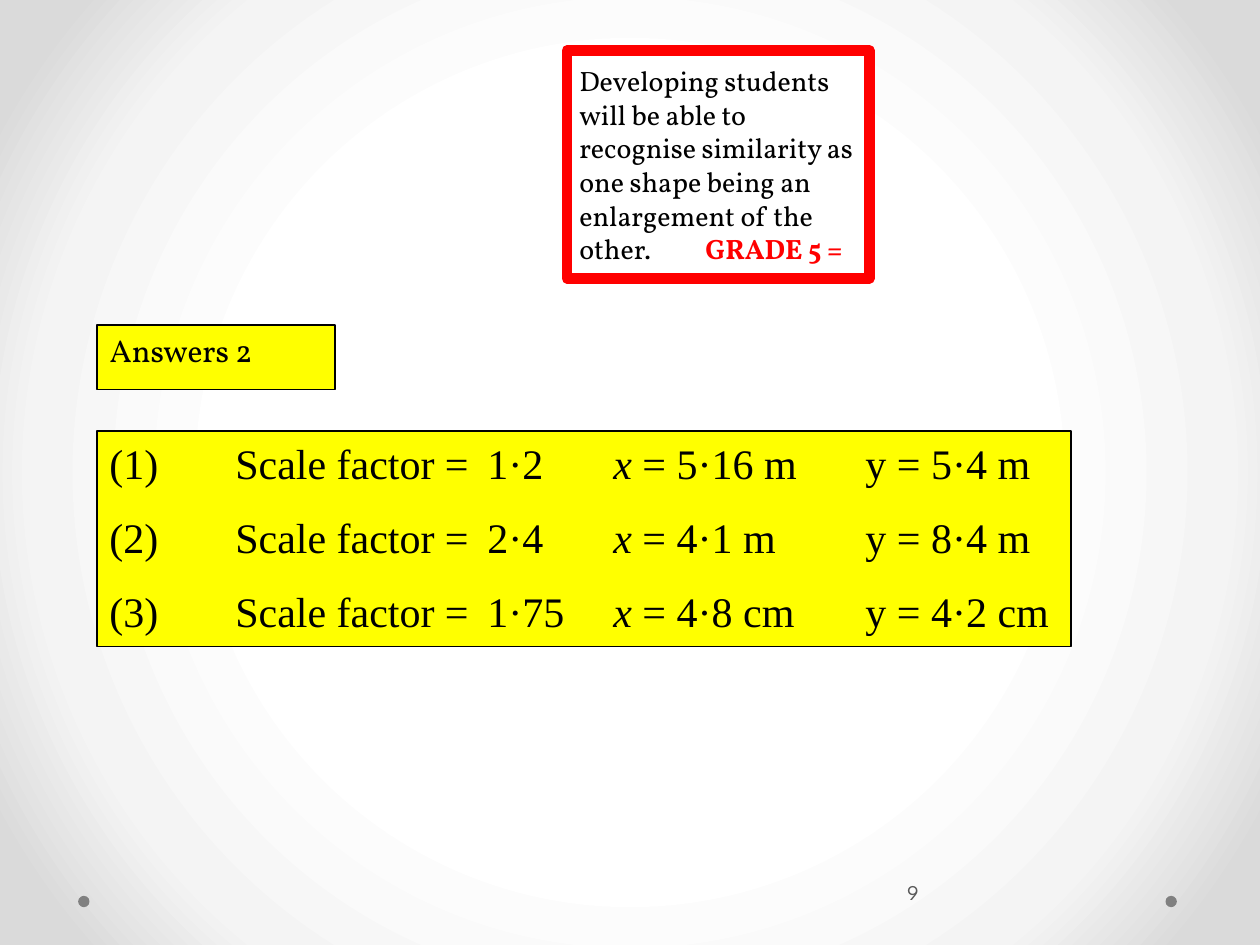
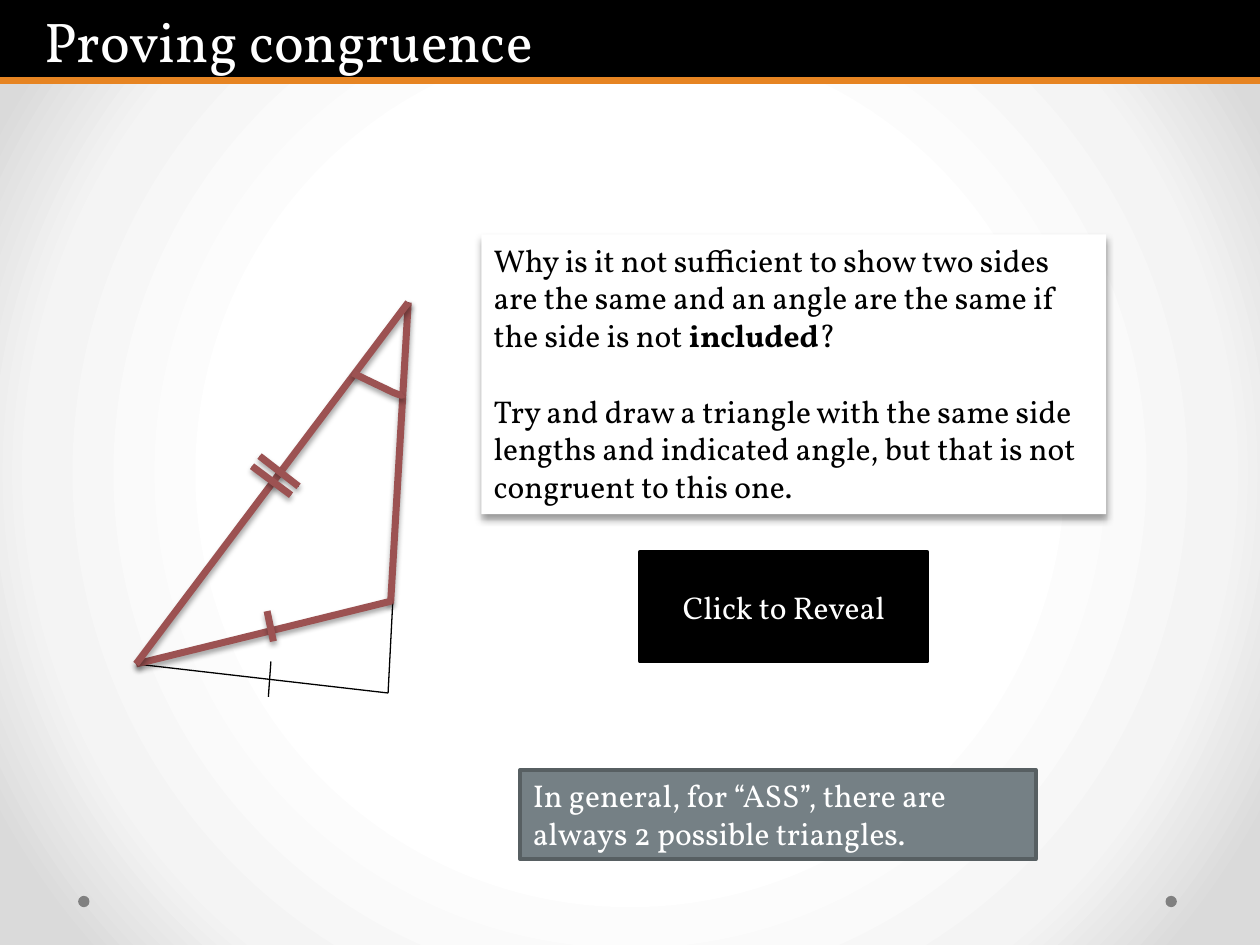
from lxml import etree
from pptx import Presentation
from pptx.dml.color import RGBColor
from pptx.enum.shapes import MSO_CONNECTOR, MSO_SHAPE
from pptx.enum.text import MSO_ANCHOR as ANCHOR, MSO_AUTO_SIZE, PP_ALIGN as ALIGN
from pptx.oxml import parse_xml
from pptx.oxml.ns import nsdecls, qn
from pptx.util import Inches, Pt

BLACK = RGBColor(0x00, 0x00, 0x00)
WHITE = RGBColor(0xFF, 0xFF, 0xFF)
RED = RGBColor(0xFF, 0x00, 0x00)
YELLOW = RGBColor(0xFF, 0xFF, 0x00)
ORANGE = RGBColor(0xE6, 0x84, 0x22)
BRICK = RGBColor(0x9C, 0x52, 0x52)
SLATE = RGBColor(0x75, 0x80, 0x85)
DARK_SLATE = RGBColor(0x57, 0x5F, 0x62)
DOT_GREY = RGBColor(0x80, 0x80, 0x80)
NUMBER_GREY = RGBColor(0x59, 0x59, 0x59)
BODY_FONT, MATHS_FONT, NUMBER_FONT = "Vollkorn", "Times New Roman", "League Spartan"

BACKGROUND_STOPS = [(50, "FFFFFF"), (76, "F4F4F4"), (92, "DADADA")]
DOT_LEFTS = [0.62, 9.25]

ANSWERS = [("1·2", "5·16 m", "5·4 m"), ("2·4", "4·1 m", "8·4 m"), ("1·75", "4·8 cm", "4·2 cm")]
ANSWER_TABS = [1, 3, 4, 6]
OBJECTIVE = (
    "Developing students will be able to recognise similarity as one shape "
    "being an enlargement of the other.\t"
)
GRADE = "GRADE 5 ="
GRADE_TAB = 0.88

QUESTION = [
    [
        ("Why is it not sufficient to show two sides are the same and an angle are "
         "the same if the side is not ", {}),
        ("included", {"bold": True}),
        ("?", {}),
    ],
    [("Try and draw a triangle with the same side lengths and indicated angle, "
      "but that is not congruent to this one.", {})],
]
REVEAL = "Click to Reveal"
CONCLUSION = "In general, for “ASS”, there are always 2 possible triangles."

APEX, LEFT_CORNER = (3.24, 2.4), (1.08, 5.27)
SHARED_LINES = [
    (LEFT_CORNER, APEX),
    ((2.06, 3.62), (2.37, 3.86)),
    ((2, 3.7), (2.31, 3.93)),
]
OUTER_LINES = [(APEX, (3.08, 5.5)), (LEFT_CORNER, (3.08, 5.5)), ((2.15, 5.25), (2.13, 5.53))]
INNER_LINES = [(APEX, (3.1, 4.79)), (LEFT_CORNER, (3.11, 4.77)), ((2.12, 4.85), (2.17, 5.09))]
ANGLE_CURVES = [
    [(2.8, 2.96), (2.92, 3.02), (3.05, 3.08), (3.11, 3.11)],
    [(3.11, 3.11), (3.18, 3.14), (3.19, 3.14), (3.2, 3.13)],
]
CURVE_STEPS = 8
BOX_SHADOW = (40, 4, 3)
LINE_SHADOW = (35, 3.1, 1.8)


def set_shadow(shape, shadow=None):
    properties = shape.element.spPr
    for effects in properties.findall(qn("a:effectLst")):
        properties.remove(effects)
    effects = etree.SubElement(properties, qn("a:effectLst"))
    if shadow:
        opacity, blur, distance = shadow
        outer = etree.SubElement(
            effects, qn("a:outerShdw"), blurRad=str(Pt(blur)), dist=str(Pt(distance)),
            dir="5400000", rotWithShape="0",
        )
        color = etree.SubElement(outer, qn("a:srgbClr"), val=str(BLACK))
        etree.SubElement(color, qn("a:alpha"), val=str(opacity * 1000))


def set_look(shape, fill, line=None, width=0.75):
    shape.fill.solid()
    shape.fill.fore_color.rgb = fill
    if line is None:
        shape.line.fill.background()
    else:
        shape.line.color.rgb = line
        shape.line.width = Pt(width)


def add_box(slide, kind, bounds, fill, line=None, width=0.75, shadow=None):
    shape = slide.shapes.add_shape(kind, *map(Inches, bounds))
    set_look(shape, fill, line, width)
    set_shadow(shape, shadow)
    return shape


def format_run(run, size, color, font=BODY_FONT, bold=False, italic=False):
    run.font.name = font
    run.font.size = Pt(size)
    run.font.color.rgb = color
    run.font.bold = bold
    run.font.italic = italic


def write(shape, paragraphs, size, color, font=BODY_FONT, gap=0,
          align=ALIGN.LEFT, anchor=ANCHOR.TOP):
    frame = shape.text_frame
    frame.word_wrap = True
    frame.auto_size = MSO_AUTO_SIZE.NONE
    frame.vertical_anchor = anchor
    for index, pieces in enumerate(paragraphs):
        paragraph = frame.add_paragraph() if index else frame.paragraphs[0]
        paragraph.alignment = align
        if index:
            paragraph.space_before = Pt(gap)
        for text, changes in pieces:
            run = paragraph.add_run()
            run.text = text
            format_run(run, **{"size": size, "color": color, "font": font, **changes})


def set_tabs(paragraph, positions, numbered=False):
    properties = paragraph._p.get_or_add_pPr()
    properties.set("marL", "0")
    properties.set("indent", "0")
    if numbered:
        etree.SubElement(properties, qn("a:buFont"), typeface=MATHS_FONT)
        etree.SubElement(properties, qn("a:buAutoNum"), type="arabicParenBoth")
    tabs = etree.SubElement(properties, qn("a:tabLst"))
    for position in positions:
        etree.SubElement(tabs, qn("a:tab"), pos=str(Inches(position)), algn="l")


def add_line(shapes, start, end, color, width, shadow=None):
    line = shapes.add_connector(MSO_CONNECTOR.STRAIGHT, *map(Inches, start + end))
    line.line.color.rgb = color
    line.line.width = Pt(width)
    set_shadow(line, shadow)


def curve_point(curve, t):
    weights = [(1 - t) ** 3, 3 * t * (1 - t) ** 2, 3 * t * t * (1 - t), t ** 3]
    return tuple(
        Inches(sum(weight * point[axis] for weight, point in zip(weights, curve)))
        for axis in (0, 1)
    )


def add_triangle(slide, lines, color, width, shadow=None):
    shapes = slide.shapes.add_group_shape().shapes
    for start, end in lines + SHARED_LINES:
        add_line(shapes, start, end, color, width, shadow)
    points = [
        curve_point(curve, step / CURVE_STEPS)
        for curve in ANGLE_CURVES for step in range(CURVE_STEPS + 1)
    ]
    builder = shapes.build_freeform(*points[0])
    builder.add_line_segments(points[1:], close=False)
    angle = builder.convert_to_shape()
    angle.fill.background()
    angle.line.color.rgb = color
    angle.line.width = Pt(width)
    set_shadow(angle, shadow)


def add_title(slide, text, bounds, size, color, fill, line=None):
    title = slide.shapes.title
    title.left, title.top, title.width, title.height = map(Inches, bounds)
    set_look(title, fill, line)
    write(title, [[(text, {})]], size, color)
    return title


def style_master(presentation, slide):
    master = presentation.slide_master
    master.background.fill.gradient()
    gradient = master.element.find(".//" + qn("p:bgPr") + "/" + qn("a:gradFill"))
    stops = "".join(
        f'<a:gs pos="{position * 1000}"><a:srgbClr val="{color}"/></a:gs>'
        for position, color in BACKGROUND_STOPS
    )
    gradient.getparent().replace(gradient, parse_xml(
        f'<a:gradFill {nsdecls("a")} rotWithShape="1"><a:gsLst>{stops}</a:gsLst>'
        '<a:path path="circle"><a:fillToRect l="50000" t="50000" r="50000" b="50000"/>'
        "</a:path></a:gradFill>"
    ))
    for left in DOT_LEFTS:
        dot = add_box(slide, MSO_SHAPE.OVAL, (left, 7.11, 0.09, 0.09), DOT_GREY)
        master.shapes.element.append(dot.element)


def build_answers(slide):
    add_title(slide, "Answers 2", (0.77, 2.58, 1.89, 0.51), 18, BLACK, YELLOW, BLACK)

    number = slide.shapes.add_textbox(*map(Inches, (7.17, 6.83, 2.08, 0.5)))
    number.text_frame.margin_left = Inches(0.03)
    write(number, [[("9", {})]], 12, NUMBER_GREY, NUMBER_FONT, anchor=ANCHOR.MIDDLE)

    answers = add_box(slide, MSO_SHAPE.RECTANGLE, (0.77, 3.42, 7.73, 1.71), YELLOW, BLACK)
    rows = [
        [(f"\tScale factor =\t{factor}\t", {}), ("x", {"italic": True}), (f" = {x}\ty = {y}", {})]
        for factor, x, y in ANSWERS
    ]
    write(answers, rows, 24, BLACK, MATHS_FONT, gap=13.5)
    for paragraph in answers.text_frame.paragraphs:
        set_tabs(paragraph, ANSWER_TABS, numbered=True)

    objective = add_box(slide, MSO_SHAPE.RECTANGLE, (4.5, 0.4, 2.4, 1.81), WHITE, RED, 6)
    pieces = [(OBJECTIVE, {}), (GRADE, {"color": RED, "bold": True})]
    write(objective, [pieces], 16, BLACK, anchor=ANCHOR.MIDDLE)
    set_tabs(objective.text_frame.paragraphs[0], [GRADE_TAB])


def build_congruence(slide):
    title = add_title(slide, "Proving congruence", (0, 0, 10, 0.66), 32, WHITE, BLACK)
    title.text_frame.margin_left = Inches(0.35)
    add_line(slide.shapes, (0, 0.64), (10, 0.64), ORANGE, 4)

    add_triangle(slide, OUTER_LINES, BLACK, 0.75)
    question = add_box(
        slide, MSO_SHAPE.RECTANGLE, (3.82, 1.86, 4.96, 2.22), WHITE, shadow=BOX_SHADOW
    )
    write(question, QUESTION, 18, BLACK, gap=21.5)
    add_triangle(slide, INNER_LINES, BRICK, 4, LINE_SHADOW)

    reveal = add_box(slide, MSO_SHAPE.RECTANGLE, (5.08, 4.38, 2.28, 0.87), BLACK, BLACK, 2.25)
    write(reveal, [[(REVEAL, {})]], 18, WHITE, align=ALIGN.CENTER, anchor=ANCHOR.MIDDLE)
    conclusion = add_box(
        slide, MSO_SHAPE.RECTANGLE, (4.13, 6.11, 4.09, 0.71), SLATE, DARK_SLATE, 2.25
    )
    write(conclusion, [[(CONCLUSION, {})]], 18, WHITE)


def main():
    """Build the similarity answers and congruence slides."""
    presentation = Presentation()
    presentation.slide_width, presentation.slide_height = Inches(10), Inches(7.5)
    title_only = presentation.slide_layouts[5]
    answers, congruence = [presentation.slides.add_slide(title_only) for _ in range(2)]
    style_master(presentation, answers)
    build_answers(answers)
    build_congruence(congruence)
    presentation.save("out.pptx")


if __name__ == "__main__":
    main()
